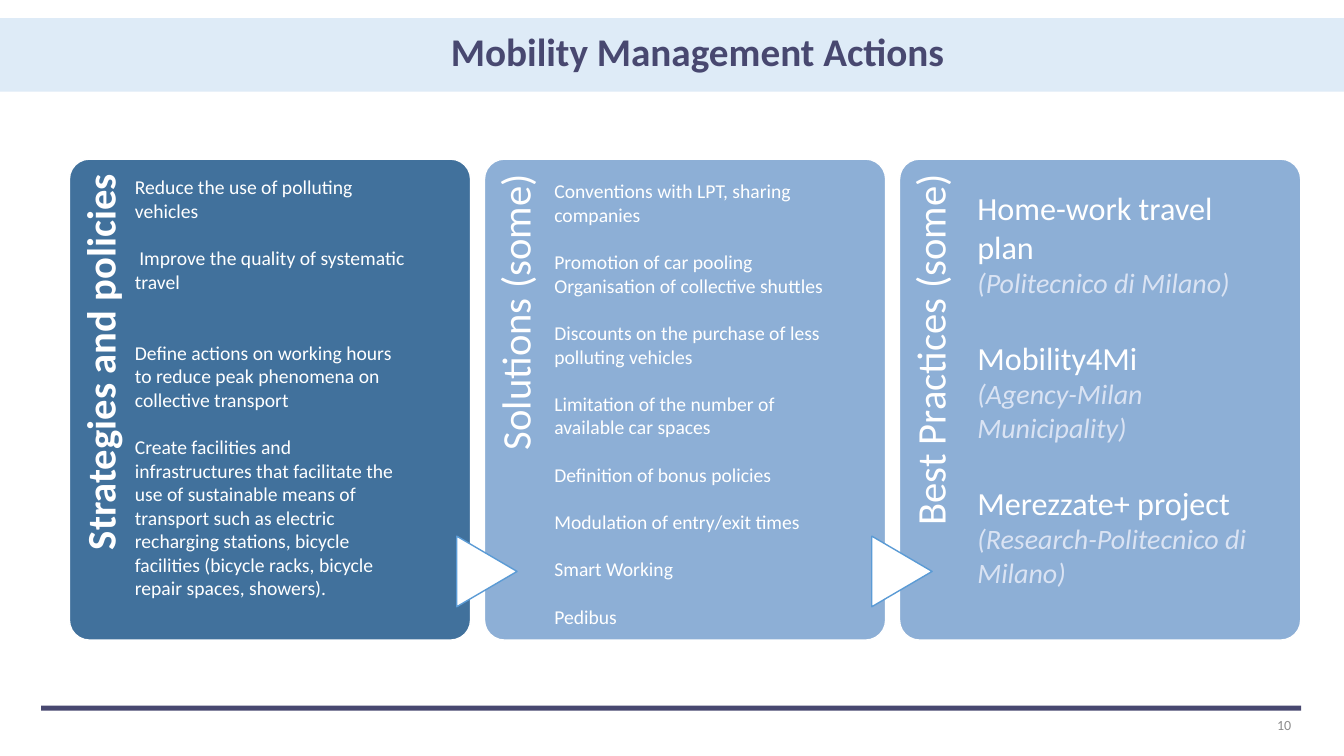
from dataclasses import dataclass

from pptx import Presentation
from pptx.dml.color import RGBColor
from pptx.enum.shapes import MSO_SHAPE as Preset
from pptx.enum.text import MSO_ANCHOR as Anchor, PP_ALIGN as Align
from pptx.util import Cm, Pt


@dataclass(frozen=True)
class Theme:
    font: str = "Calibri"
    navy: str = "484870"
    band: str = "DEEBF7"
    dark_card: str = "41719C"
    light_card: str = "8DAFD6"
    white: str = "FFFFFF"
    arrow_line: str = "5B9BD5"
    note: str = "DAE3F3"
    grey: str = "8C8C8C"
    title_size: float = 28
    label_size: float = 29
    body_size: float = 14
    practice_size: float = 23
    note_size: float = 20
    number_size: float = 10


@dataclass(frozen=True)
class Box:
    left: float
    top: float
    width: float
    height: float

    def lengths(self) -> tuple:
        return Cm(self.left), Cm(self.top), Cm(self.width), Cm(self.height)


@dataclass(frozen=True)
class Entry:
    text: str
    blank_lines: int = 1
    note: str = ""


@dataclass(frozen=True)
class Card:
    label: str
    fill: str
    size: float
    text_box: Box
    entries: tuple
    bold: bool = False


THEME = Theme()
CARD = Box(1.75, 4.01, 10.11, 12.12)
CARD_PITCH = 10.46
LINE_HEIGHT = 1.2

CARDS = (
    Card("Strategies and policies", THEME.dark_card, THEME.body_size,
         Box(3.15, 4.29, 7.34, 11.02), (
             Entry("Reduce the use of polluting vehicles"),
             Entry(" Improve the quality of systematic travel"),
             Entry("Define actions on working hours to reduce peak phenomena "
                   "on collective transport", 2),
             Entry("Create facilities and infrastructures that facilitate the use of "
                   "sustainable means of transport such as electric recharging stations, "
                   "bicycle facilities (bicycle racks, bicycle repair spaces, showers)."),
         ), bold=True),
    Card("Solutions (some)", THEME.light_card, THEME.body_size,
         Box(13.72, 4.39, 7.42, 11.63), (
             Entry("Conventions with LPT, sharing companies"),
             Entry("Promotion of car pooling"),
             Entry("Organisation of collective shuttles", 0),
             Entry("Discounts on the purchase of less polluting vehicles"),
             Entry("Limitation of the number of available car spaces"),
             Entry("Definition of bonus policies"),
             Entry("Modulation of entry/exit times"),
             Entry("Smart Working"),
             Entry("Pedibus"),
         )),
    Card("Best Practices (some)", THEME.light_card, THEME.practice_size,
         Box(24.38, 4.62, 7.34, 11.2), (
             Entry("Home-work travel plan", note="(Politecnico di Milano)"),
             Entry("Mobility4Mi", note="(Agency-Milan Municipality)"),
             Entry("Merezzate+ project", note="(Research-Politecnico di Milano)"),
         )),
)


def add_block(slide, preset: Preset, box: Box, fill: str, line: str = ""):
    shape = slide.shapes.add_shape(preset, *box.lengths())
    shape.shadow.inherit = False
    shape.fill.solid()
    shape.fill.fore_color.rgb = RGBColor.from_string(fill)
    if line:
        shape.line.color.rgb = RGBColor.from_string(line)
        shape.line.width = Pt(1)
    else:
        shape.line.fill.background()
    return shape


def add_run(paragraph, text: str, size: float, color: str, **formats) -> None:
    run = paragraph.add_run()
    run.text = text
    run.font.color.rgb = RGBColor.from_string(color)
    values = {"name": THEME.font, "size": Pt(size), **formats}
    for name, value in values.items():
        setattr(run.font, name, value)


def add_text_box(slide, box: Box, **formats):
    shape = slide.shapes.add_textbox(*box.lengths())
    for name, value in {"word_wrap": True, **formats}.items():
        setattr(shape.text_frame, name, value)
    return shape


def add_line_of_text(slide, box: Box, text: str, size: float, color: str,
                     alignment: Align, bold: bool = False, **formats):
    shape = add_text_box(slide, box, **formats)
    paragraph = shape.text_frame.paragraphs[0]
    paragraph.alignment = alignment
    paragraph.line_spacing = 0.9
    add_run(paragraph, text, size, color, bold=bold)
    return shape


def add_entries(slide, card: Card) -> None:
    frame = add_text_box(slide, card.text_box).text_frame
    for index, entry in enumerate(card.entries):
        paragraph = frame.add_paragraph() if index else frame.paragraphs[0]
        if index:
            paragraph.space_before = Pt(round(entry.blank_lines * LINE_HEIGHT * card.size))
        add_run(paragraph, entry.text, card.size, THEME.white)
        if entry.note:
            paragraph.add_line_break()
            add_run(paragraph, entry.note, THEME.note_size, THEME.note, italic=True)


def add_card(slide, card: Card, index: int) -> None:
    left = CARD.left + index * CARD_PITCH
    panel = add_block(slide, Preset.ROUNDED_RECTANGLE,
                      Box(left, CARD.top, CARD.width, CARD.height), card.fill, THEME.white)
    panel.adjustments[0] = 0.05

    # Label reading upwards along the left side
    label = add_line_of_text(
        slide, Box(left - 3.95, 7.98, 9.93, 2.03), card.label, THEME.label_size,
        THEME.white, Align.RIGHT, card.bold, margin_left=0, margin_top=Cm(0.28),
        margin_right=Cm(0.36), margin_bottom=0)
    label.rotation = 270

    # Arrow from the card before
    if index:
        arrow = add_block(slide, Preset.FLOWCHART_EXTRACT,
                          Box(left - 0.83, 13.64, 1.78, 1.52), THEME.white, THEME.arrow_line)
        arrow.rotation = 90


def main() -> None:
    presentation = Presentation()
    presentation.slide_width, presentation.slide_height = Cm(33.87), Cm(19.05)
    slide = presentation.slides.add_slide(presentation.slide_layouts[6])

    # Title band and footer
    add_block(slide, Preset.RECTANGLE, Box(0, 0.46, 33.87, 1.85), THEME.band)
    add_block(slide, Preset.RECTANGLE, Box(1.04, 17.78, 31.75, 0.13), THEME.navy)
    add_line_of_text(slide, Box(2.97, 0.43, 29.21, 1.83), "Mobility Management Actions",
                     THEME.title_size, THEME.navy, Align.CENTER, True,
                     vertical_anchor=Anchor.MIDDLE)
    add_line_of_text(slide, Box(25.17, 17.88, 7.62, 0.84), "10", THEME.number_size,
                     THEME.grey, Align.RIGHT, vertical_anchor=Anchor.MIDDLE)

    # Three cards, then their texts on top
    for index, card in enumerate(CARDS):
        add_card(slide, card, index)
    for card in CARDS:
        add_entries(slide, card)

    presentation.save("out.pptx")


if __name__ == "__main__":
    main()
